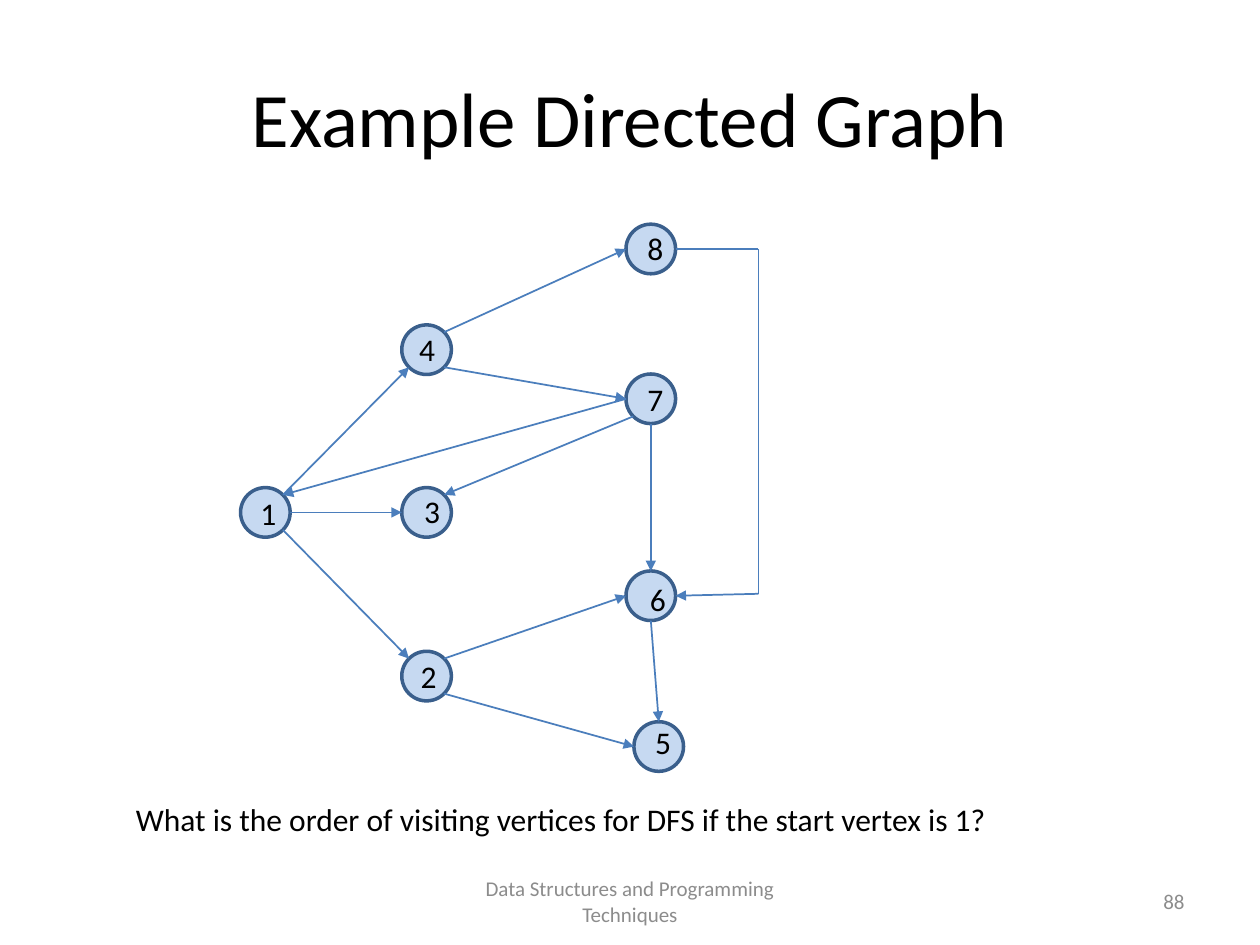
from math import cos, radians, sin

from lxml import etree
from pptx import Presentation
from pptx.dml.color import RGBColor
from pptx.enum.shapes import MSO_CONNECTOR, MSO_SHAPE
from pptx.enum.text import MSO_ANCHOR, PP_ALIGN
from pptx.oxml.ns import qn
from pptx.util import Cm, Pt

LEFT, CENTER, RIGHT = PP_ALIGN.LEFT, PP_ALIGN.CENTER, PP_ALIGN.RIGHT
TOP, MIDDLE = MSO_ANCHOR.TOP, MSO_ANCHOR.MIDDLE
STRAIGHT, OVAL = MSO_CONNECTOR.STRAIGHT, MSO_SHAPE.OVAL

THEME = {
    "font": "Calibri",
    "text": "000000", "muted": "8C8C8C",
    "node": "C6D9F1", "outline": "3A5F8C", "edge": "4B7EBC",
    "title": 44, "body": 18, "footer": 12,
}

TITLE = "Example Directed Graph"
QUESTION = "What is the order of visiting vertices for DFS if the start vertex is 1?"
FOOTER = "Data Structures and Programming Techniques"
PAGE = "88"

# All lengths are in centimetres.
DIAMETER = 1
LABEL_SIZE = (0.72, 1.02)
DETOUR_X, DETOUR_END_Y = 15.29, 11.97

# vertex: (left, top), (label offset from left, from top)
VERTICES = {
    1: ((4.85, 9.83), (0.15, 0)),
    2: ((8.1, 13.13), (0.13, 0)),
    3: ((8.1, 9.83), (0.2, -0.03)),
    4: ((8.1, 6.55), (0.1, -0.03)),
    8: ((12.62, 4.52), (0.18, -0.03)),
    5: ((12.78, 14.55), (0.18, -0.1)),
    6: ((12.62, 11.51), (0.23, 0.05)),
    7: ((12.62, 7.54), (0.18, 0)),
}

# Points on a vertex's rim, as clockwise angles from the right
ANGLES = {"right": 0, "low right": 45, "bottom": 90, "low left": 135,
          "left": 180, "high left": 225, "top": 270, "high right": 315}

EDGES = [
    (1, "high right", 4, "low left"),
    (1, "right", 3, "left"),
    (1, "low right", 2, "high left"),
    (2, "high right", 6, "left"),
    (2, "low right", 5, "left"),
    (4, "high right", 8, "left"),
    (4, "low right", 7, "left"),
    (7, "left", 1, "high right"),
    (7, "low left", 3, "high right"),
    (7, "bottom", 6, "top"),
    (6, "bottom", 5, "top"),
]


def color(name):
    return RGBColor.from_string(THEME[name])


def write(s, text, size="body", fill="text", align=CENTER, anchor=TOP, wrap=True):
    tf = s.text_frame
    tf.word_wrap = wrap
    tf.vertical_anchor = anchor
    p = tf.paragraphs[0]
    p.alignment = align
    r = p.add_run()
    r.text = text
    r.font.name = THEME["font"]
    r.font.size = Pt(THEME[size])
    r.font.color.rgb = color(fill)


def add_text(slide, box, text, **style):
    write(slide.shapes.add_textbox(*map(Cm, box)), text, **style)


def add_vertex(slide, left, top):
    s = slide.shapes.add_shape(OVAL, *map(Cm, (left, top, DIAMETER, DIAMETER)))
    s.shadow.inherit = False
    s.fill.solid()
    s.fill.fore_color.rgb = color("node")
    s.line.color.rgb = color("outline")
    s.line.width = Pt(2)


def rim(vertex, side):
    (left, top), _ = VERTICES[vertex]
    radius, angle = DIAMETER / 2, radians(ANGLES[side])
    return left + radius * (1 + cos(angle)), top + radius * (1 + sin(angle))


def add_line(slide, start, end, arrow=True):
    s = slide.shapes.add_connector(STRAIGHT, *map(Cm, start + end))
    s.line.color.rgb = color("edge")
    s.line.width = Pt(1)
    if arrow:
        etree.SubElement(s.line._get_or_add_ln(), qn("a:tailEnd"), type="triangle")
    etree.SubElement(s._element.spPr, qn("a:effectLst"))


def main():
    prs = Presentation()
    prs.slide_width, prs.slide_height = Cm(25.4), Cm(19.05)
    slide = prs.slides.add_slide(prs.slide_layouts[5])

    title = slide.shapes.title
    title.left, title.top, title.width, title.height = map(Cm, (1.27, 0.76, 22.86, 3.18))
    write(title, TITLE, size="title", anchor=MIDDLE)

    footer = {"size": "footer", "fill": "muted", "anchor": MIDDLE}
    add_text(slide, (8.68, 17.66, 8.04, 1.01), FOOTER, **footer)
    add_text(slide, (18.2, 17.66, 5.93, 1.01), PAGE, align=RIGHT, **footer)

    for (left, top), _ in VERTICES.values():
        add_vertex(slide, left, top)

    for source, leaving, target, entering in EDGES:
        add_line(slide, rim(source, leaving), rim(target, entering))

    # The edge from 8 to 6 goes round vertex 7.
    start, end = rim(8, "right"), rim(6, "right")
    upper, lower = (DETOUR_X, start[1]), (DETOUR_X, DETOUR_END_Y)
    add_line(slide, start, upper, arrow=False)
    add_line(slide, upper, lower, arrow=False)
    add_line(slide, lower, end)

    for vertex, ((left, top), (dx, dy)) in sorted(VERTICES.items()):
        add_text(slide, (left + dx, top + dy, *LABEL_SIZE), str(vertex), wrap=False)

    add_text(slide, (2.49, 16, 19, 1.02), QUESTION, align=LEFT)
    prs.save("out.pptx")


if __name__ == "__main__":
    main()
